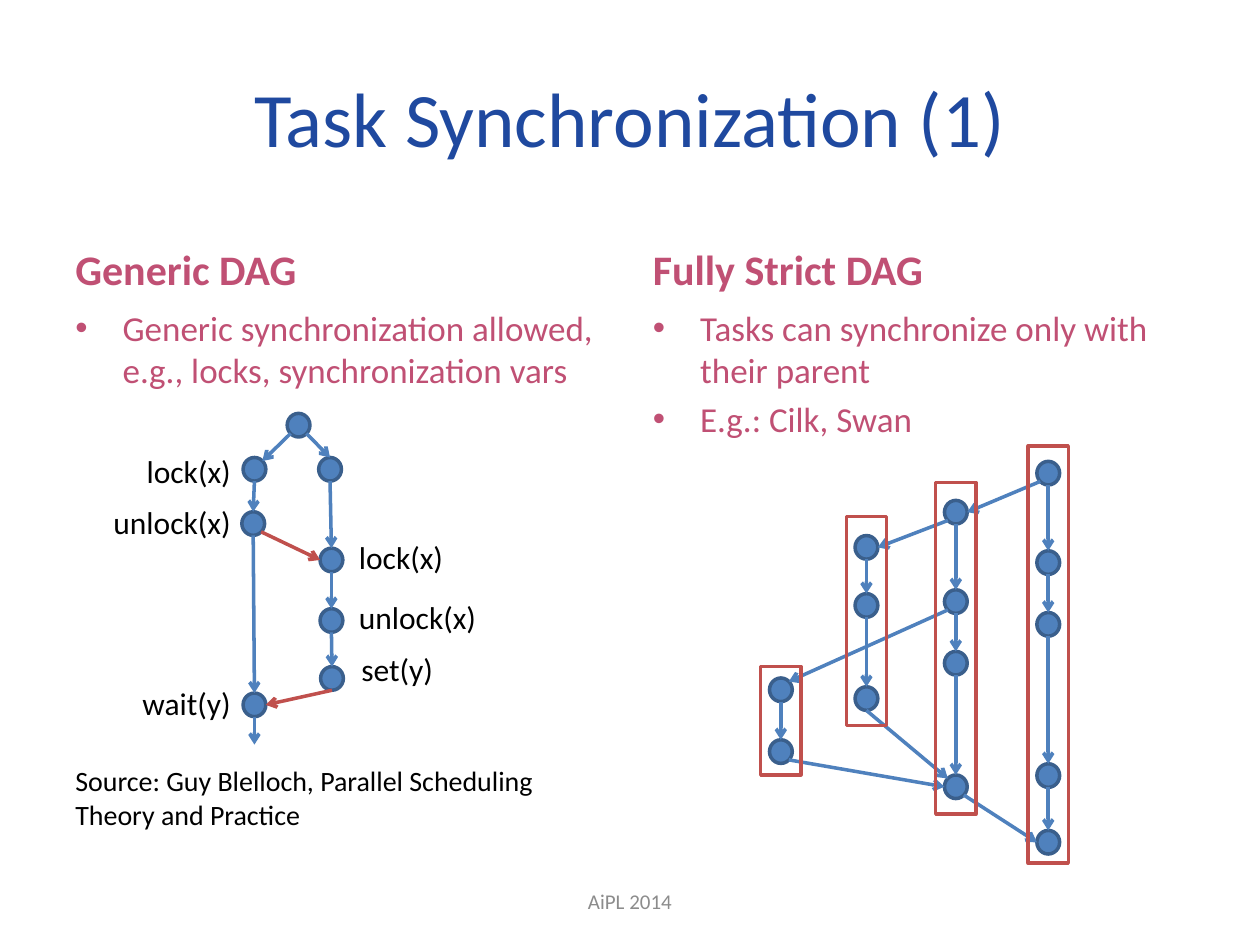
from pptx import Presentation
from pptx.dml.color import RGBColor
from pptx.enum.shapes import MSO_CONNECTOR, MSO_SHAPE
from pptx.enum.text import MSO_ANCHOR, PP_ALIGN
from pptx.oxml.ns import qn
from pptx.util import Pt
from lxml import etree

LEFT, CENTER, RIGHT = PP_ALIGN.LEFT, PP_ALIGN.CENTER, PP_ALIGN.RIGHT
TOP, MIDDLE, BOTTOM = MSO_ANCHOR.TOP, MSO_ANCHOR.MIDDLE, MSO_ANCHOR.BOTTOM
OVAL, RECTANGLE = MSO_SHAPE.OVAL, MSO_SHAPE.RECTANGLE
STRAIGHT = MSO_CONNECTOR.STRAIGHT

BLUE, DARK_BLUE, RED = "4F81BD", "3A5F8C", "C0504D"
TITLE_BLUE, PINK, GRAY, BLACK = "1F499F", "C05074", "8C8C8C", "000000"
NODE_W, NODE_H = 13, 13.5
FRAME_W = 23

# Attachment sites on a node, as fractions of its half width and half height
SITES = {"top": (0, -1), "bottom": (0, 1), "left": (-1, 0), "right": (1, 0),
         "top left": (-0.7, -0.7), "top right": (0.7, -0.7),
         "bottom left": (-0.7, 0.7), "bottom right": (0.7, 0.7)}


def rgb(color):
    return RGBColor.from_string(color)


def add_text(box, lines, size, color, align=LEFT, anchor=TOP,
             bold=False, bullets=False, wrap=True):
    """Add a text box; box is left, top, width, height in points."""
    frame = slide.shapes.add_textbox(*map(Pt, box)).text_frame
    frame.word_wrap = wrap
    frame.vertical_anchor = anchor
    frame.text = "\n".join(lines)
    for index, paragraph in enumerate(frame.paragraphs):
        paragraph.alignment = align
        if index:
            paragraph.space_before = Pt(4)
        if bullets:
            properties = paragraph._p.get_or_add_pPr()
            properties.set("marL", str(Pt(27)))
            properties.set("indent", str(-Pt(27)))
            etree.SubElement(properties, qn("a:buFont"), typeface="Arial")
            etree.SubElement(properties, qn("a:buChar"), char="•")
        for run in paragraph.runs:
            run.font.name = "Calibri"
            run.font.size = Pt(size)
            run.font.bold = bold
            run.font.color.rgb = rgb(color)


deck = Presentation()
deck.slide_width, deck.slide_height = Pt(720), Pt(540)
slide = deck.slides.add_slide(deck.slide_layouts[6])

add_text((36, 21.6, 648, 90), ["Task Synchronization (1)"], 44, TITLE_BLUE, CENTER, MIDDLE)
columns = [
    (36, "Generic DAG",
     ["Generic synchronization allowed, e.g., locks, synchronization vars"]),
    (366, "Fully Strict DAG",
     ["Tasks can synchronize only with their parent", "E.g.: Cilk, Swan"]),
]
for left, heading, points in columns:
    add_text((left, 121, 318, 50.4), [heading], 24, PINK, anchor=BOTTOM, bold=True)
    add_text((left, 171.4, 318, 311), points, 20, PINK, bullets=True)
add_text((246, 500.5, 228, 28.8), ["AiPL 2014"], 12, GRAY, CENTER, MIDDLE)
add_text((36, 433, 276, 46),
         ["Source: Guy Blelloch, Parallel Scheduling Theory and Practice"], 16, BLACK)

step_labels = [
    (75.6, 254.9, 63.4, "lock(x)", RIGHT),
    (56.9, 283.7, 82.1, "unlock(x)", RIGHT),
    (73.5, 387.4, 65.5, "wait(y)", RIGHT),
    (198, 303.8, 63.4, "lock(x)", LEFT),
    (198, 338.4, 82.1, "unlock(x)", LEFT),
    (199.4, 367.9, 56.2, "set(y)", LEFT),
]
for left, top, width, step, align in step_labels:
    add_text((left, top, width, 29), [step], 18, BLACK, align, wrap=False)

# Node centres; tasks of the strict DAG are numbered from the root on the right
nodes = {
    "fork": (170.6, 243), "left lock": (145.4, 268.2), "left unlock": (144.7, 299.2),
    "wait": (145.4, 402.8), "right start": (188.6, 268.2), "right lock": (189.4, 320),
    "right unlock": (189.4, 354.6), "set": (189.7, 387.7),
}
# Task centre, frame top, frame height, node centres down the task
tasks = [
    (599, 254.9, 238.3, [270.4, 321.5, 356.8, 443.2, 481.3]),
    (546.2, 275.8, 189.4, [292.7, 343.8, 379, 449.6]),
    (495.1, 295.2, 119.5, [312.8, 346, 399.2]),
    (446.2, 380.9, 61.9, [394.2, 429.5]),
]
chains = [["left lock", "left unlock", "wait"],
          ["right start", "right lock", "right unlock", "set"]]
for number, (x, _, _, heights) in enumerate(tasks):
    chain = [(number, step) for step in range(len(heights))]
    nodes.update(zip(chain, ((x, y) for y in heights)))
    chains.append(chain)

edges = [(start, "bottom", end, "top", BLUE)
         for chain in chains for start, end in zip(chain, chain[1:])]
edges += [
    ("fork", "bottom left", "left lock", "top right", BLUE),
    ("fork", "bottom right", "right start", "top", BLUE),
    ("left unlock", "bottom right", "right lock", "left", RED),
    ("set", "bottom", "wait", "right", RED),
    ((0, 0), "bottom left", (1, 0), "right", BLUE),
    ((1, 0), "bottom left", (2, 0), "right", BLUE),
    ((1, 1), "bottom left", (3, 0), "top right", BLUE),
    ((2, 2), "bottom", (1, 3), "top left", BLUE),
    ((3, 1), "bottom right", (1, 3), "left", BLUE),
    ((1, 3), "bottom right", (0, 4), "left", BLUE),
]

for x, y in nodes.values():
    node = slide.shapes.add_shape(OVAL, Pt(x - NODE_W / 2), Pt(y - NODE_H / 2),
                                  Pt(NODE_W), Pt(NODE_H))
    node.shadow.inherit = False
    node.fill.solid()
    node.fill.fore_color.rgb = rgb(BLUE)
    node.line.color.rgb = rgb(DARK_BLUE)
    node.line.width = Pt(2)

arrows = []
for start, start_site, end, end_site, color in edges:
    ends = []
    for name, site in ((start, start_site), (end, end_site)):
        (x, y), (dx, dy) = nodes[name], SITES[site]
        ends += [x + dx * NODE_W / 2, y + dy * NODE_H / 2]
    arrows.append((ends, color))
wait_x, wait_y = nodes["wait"]
arrows.append(([wait_x, wait_y + NODE_H / 2, wait_x, 425.5], BLUE))

for ends, color in arrows:
    arrow = slide.shapes.add_connector(STRAIGHT, *map(Pt, ends))
    arrow.line.color.rgb = rgb(color)
    arrow.line.width = Pt(2)
    etree.SubElement(arrow.line._get_or_add_ln(), qn("a:tailEnd"), type="arrow")
    etree.SubElement(arrow._element.spPr, qn("a:effectLst"))

for x, top, height, _ in tasks:
    task_frame = slide.shapes.add_shape(RECTANGLE, Pt(x - FRAME_W / 2), Pt(top),
                                        Pt(FRAME_W), Pt(height))
    task_frame.shadow.inherit = False
    task_frame.fill.background()
    task_frame.line.color.rgb = rgb(RED)
    task_frame.line.width = Pt(2)

deck.save("out.pptx")
